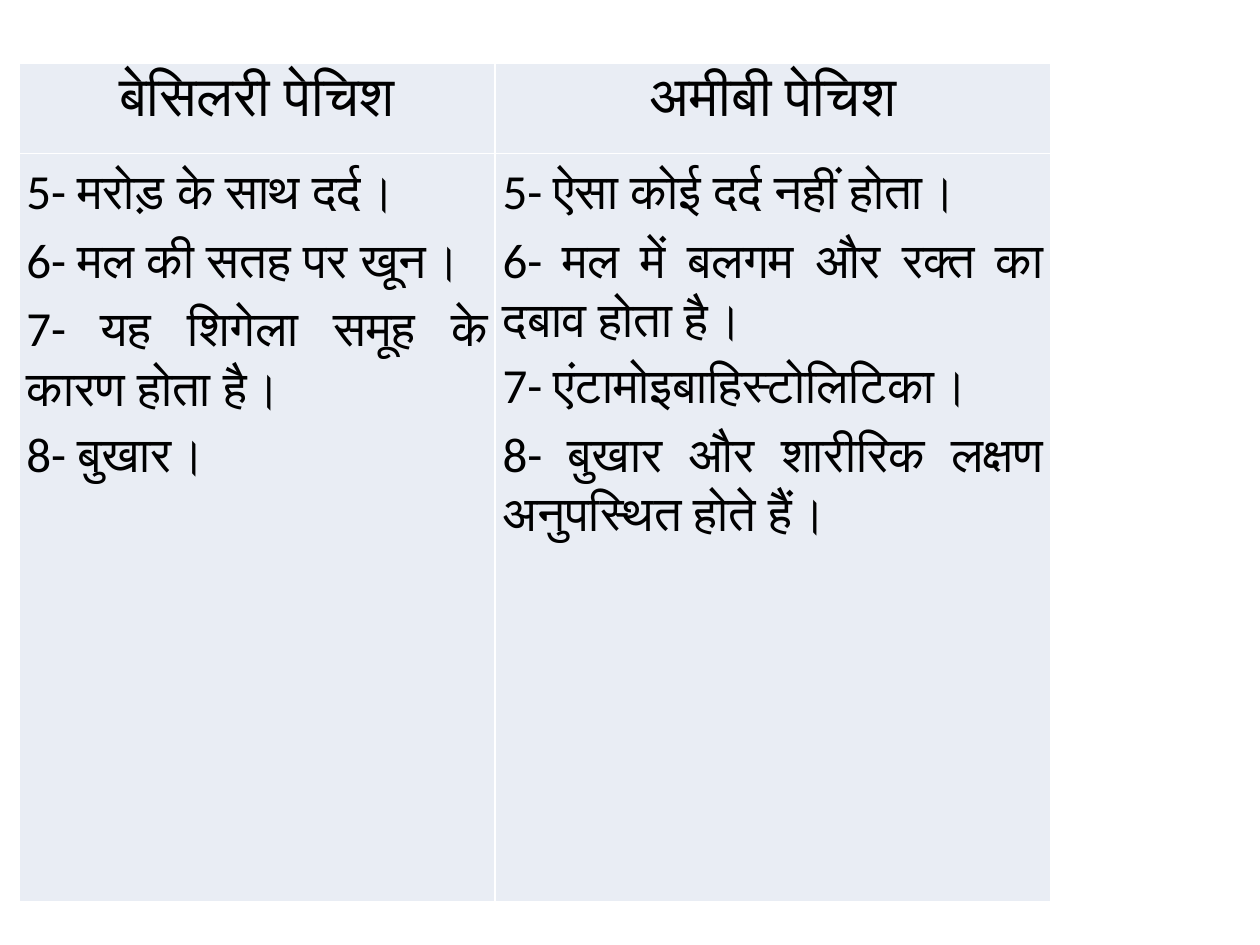
from pptx import Presentation
from pptx.dml.color import RGBColor
from pptx.enum.text import PP_ALIGN
from pptx.oxml import parse_xml
from pptx.oxml.ns import nsdecls
from pptx.util import Inches, Pt

CENTER, JUSTIFY = PP_ALIGN.CENTER, PP_ALIGN.JUSTIFY
BLACK = RGBColor(0x00, 0x00, 0x00)
WHITE = RGBColor(0xFF, 0xFF, 0xFF)
PALE_BLUE = RGBColor(0xE9, 0xED, 0xF4)
BLANK_LAYOUT = 6

HEADINGS = ["बेसिलरी पेचिश", "अमीबी पेचिश"]
BACILLARY_SIGNS = [
    "5- मरोड़ के साथ दर्द।",
    "6- मल की सतह पर खून।",
    "7- यह शिगेला समूह के कारण होता है।",
    "8- बुखार।",
]
AMOEBIC_SIGNS = [
    "5- ऐसा कोई दर्द नहीं होता।",
    "6- मल में बलगम और रक्त का दबाव होता है।",
    "7- एंटामोइबाहिस्टोलिटिका।",
    "8- बुखार और शारीरिक लक्षण अनुपस्थित होते हैं।",
]


class ComparisonSlide:
    font = "Calibri"
    line_spacing = 1.15
    side_margin = Inches(0.06)
    border_width = Pt(1)

    def __init__(self, deck):
        self.slide = deck.slides.add_slide(deck.slide_layouts[BLANK_LAYOUT])
        self.width, self.height = deck.slide_width, deck.slide_height

    def table(self, left, top, columns, rows):
        widths = [round(self.width * share) for share in columns]
        heights = [round(self.height * share) for share in rows]
        grid = self.slide.shapes.add_table(
            len(rows), len(columns),
            round(self.width * left), round(self.height * top),
            sum(widths), sum(heights),
        ).table
        grid.first_row = grid.horz_banding = False
        for column, width in zip(grid.columns, widths):
            column.width = width
        for row, height in zip(grid.rows, heights):
            row.height = height
        return grid

    def cell(self, cell, lines, size, alignment):
        cell.margin_left = cell.margin_right = self.side_margin
        cell.margin_top = cell.margin_bottom = 0
        self.borders(cell)
        cell.fill.solid()
        cell.fill.fore_color.rgb = PALE_BLUE
        cell.text_frame.text = "\n".join(lines)
        for paragraph in cell.text_frame.paragraphs:
            paragraph.alignment = alignment
            paragraph.line_spacing = self.line_spacing
            for run in paragraph.runs:
                run.font.name = self.font
                run.font.size = Pt(size)
                run.font.color.rgb = BLACK

    def borders(self, cell):
        properties = cell._tc.get_or_add_tcPr()
        for side in ("lnL", "lnR", "lnT", "lnB"):
            properties.append(parse_xml(
                f'<a:{side} {nsdecls("a")} w="{self.border_width}"><a:solidFill>'
                f'<a:srgbClr val="{WHITE}"/></a:solidFill></a:{side}>'
            ))


def main():
    deck = Presentation()
    deck.slide_width, deck.slide_height = Inches(10), Inches(7.5)
    page = ComparisonSlide(deck)
    comparison = page.table(
        0.015, 0.5 / 7.5, columns=[0.378, 0.441], rows=[0.72 / 7.5, 5.94 / 7.5]
    )
    for column, (heading, signs) in enumerate(
        zip(HEADINGS, [BACILLARY_SIGNS, AMOEBIC_SIGNS])
    ):
        page.cell(comparison.cell(0, column), [heading], 32, CENTER)
        page.cell(comparison.cell(1, column), signs, 28, JUSTIFY)
    deck.save("out.pptx")


if __name__ == "__main__":
    main()
